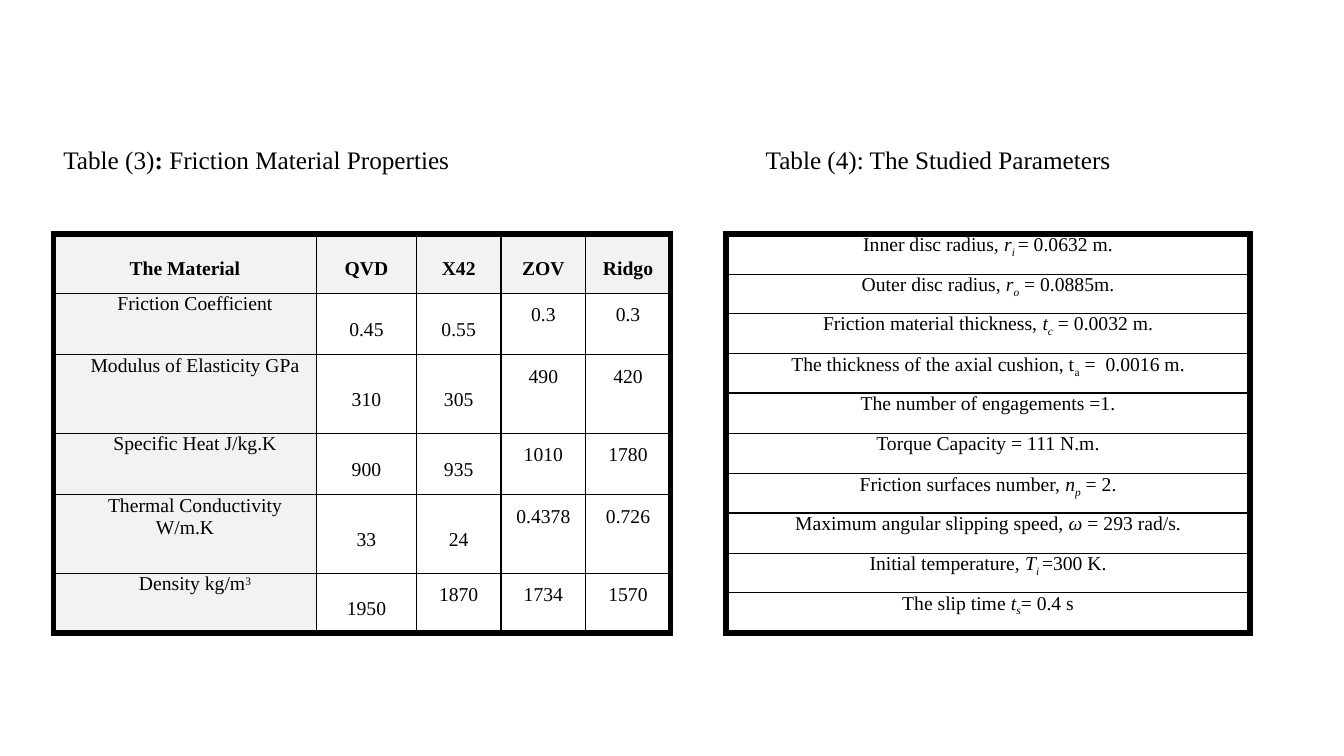
from dataclasses import dataclass
from typing import NamedTuple

from lxml import etree
from pptx import Presentation
from pptx.dml.color import RGBColor
from pptx.enum.text import MSO_ANCHOR, PP_ALIGN
from pptx.oxml.ns import qn
from pptx.util import Pt

PX = 9144  # EMU; 100 px to the inch
TOP, MIDDLE = MSO_ANCHOR.TOP, MSO_ANCHOR.MIDDLE
LEFT, CENTER = PP_ALIGN.LEFT, PP_ALIGN.CENTER
BLANK_LAYOUT = 6


@dataclass(frozen=True)
class Theme:
    font: str = "Times New Roman"
    ink: str = "000000"
    label_fill: str = "F2F2F2"
    caption_size: float = 18
    cell_size: float = 14
    frame_line: float = 4.5
    grid_line: float = 1


THEME = Theme()


class Span(NamedTuple):
    text: str
    bold: bool = False
    italic: bool = False
    baseline: int = 0


class Caption(NamedTuple):
    left: int
    width: int
    align: PP_ALIGN
    spans: list[Span]


class Material(NamedTuple):
    label: list[Span]
    values: list[str]
    height: int
    middle_columns: tuple[int, ...] = (1, 2)


class Parameter(NamedTuple):
    label: str
    symbol: str = ""
    index: str = ""
    value: str = ""
    italic: bool = True


@dataclass
class Cell:
    spans: list[Span]
    anchor: MSO_ANCHOR = TOP
    line_spacing: float = 1.0
    indent: int = 0
    fill: str | None = None


@dataclass
class Grid:
    left: int
    top: int
    widths: list[int]
    heights: list[int]
    rows: list[list[Cell]]


CAPTION_TOP, CAPTION_HEIGHT = 138, 40
CAPTIONS = [
    Caption(53, 407, LEFT, [Span("Table (3)"), Span(": ", bold=True),
                            Span("Friction Material Properties")]),
    Caption(597, 667, CENTER, [Span("Table (4): The Studied Parameters")]),
]

MATERIAL_HEADER = ["The Material", "QVD", "X42", "ZOV", "Ridgo"]
HEADER_HEIGHT = 59
MATERIALS = [
    Material([Span("Friction Coefficient")], ["0.45", "0.55", "0.3", "0.3"], 61),
    Material([Span("Modulus of Elasticity GPa")], ["310", "305", "490", "420"], 78),
    Material([Span("Specific Heat J/kg.K")], ["900", "935", "1010", "1780"], 61),
    Material([Span("Thermal Conductivity W/m.K")], ["33", "24", "0.4378", "0.726"], 78),
    Material([Span("Density kg/m"), Span("3", baseline=30)],
             ["1950", "1870", "1734", "1570"], 59, (1,)),
]

PARAMETERS = [
    Parameter("Inner disc radius, ", "r", "i ", "= 0.0632 m."),
    Parameter("Outer disc radius, ", "r", "o", " = 0.0885m."),
    Parameter("Friction material thickness, ", "t", "c", " = 0.0032 m."),
    Parameter("The thickness of the axial cushion, ", "t", "a", " =  0.0016 m.", False),
    Parameter("The number of engagements =1."),
    Parameter("Torque Capacity = 111 N.m."),
    Parameter("Friction surfaces number, ", "n", "p", " = 2."),
    Parameter("Maximum angular slipping speed, ", "ω", "", " = 293 rad/s."),
    Parameter("Initial temperature, ", "T", "i ", "=300 K."),
    Parameter("The slip time ", "t", "s", "= 0.4 s"),
]


def split_evenly(total: int, count: int) -> list[int]:
    """Whole-pixel parts that differ by at most one and add up to total."""
    edges = [round(total * step / count) for step in range(count + 1)]
    return [end - start for start, end in zip(edges, edges[1:])]


def material_rows() -> list[list[Cell]]:
    rows = [[Cell([Span(name, bold=True)], MIDDLE, 1.5, fill=THEME.label_fill)
             for name in MATERIAL_HEADER]]
    for material in MATERIALS:
        label = Cell(material.label, indent=20, fill=THEME.label_fill)
        values = [Cell([Span(value)], MIDDLE if column in material.middle_columns else TOP, 1.5)
                  for column, value in enumerate(material.values, 1)]
        rows.append([label, *values])
    return rows


def parameter_cell(parameter: Parameter) -> Cell:
    spans = [
        Span(parameter.label),
        Span(parameter.symbol, italic=parameter.italic),
        Span(parameter.index, italic=parameter.italic, baseline=-25),
        Span(parameter.value),
    ]
    return Cell([span for span in spans if span.text])


def write_spans(para, spans: list[Span], size: float) -> None:
    for span in spans:
        run = para.add_run()
        run.text = span.text
        formats = {"name": THEME.font, "size": Pt(size),
                   "bold": span.bold, "italic": span.italic}
        for name, value in formats.items():
            setattr(run.font, name, value)
        run.font.color.rgb = RGBColor.from_string(THEME.ink)
        if span.baseline:
            run._r.get_or_add_rPr().set("baseline", str(span.baseline * 1000))


def add_caption(page, caption: Caption) -> None:
    box = page.shapes.add_textbox(caption.left * PX, CAPTION_TOP * PX,
                                  caption.width * PX, CAPTION_HEIGHT * PX)
    box.text_frame.word_wrap = True
    para = box.text_frame.paragraphs[0]
    para.alignment = caption.align
    write_spans(para, caption.spans, THEME.caption_size)


def set_borders(table_cell, on_frame: dict[str, bool]) -> None:
    """Draw all four sides, heavier where the side lies on the table's frame."""
    properties = table_cell._tc.get_or_add_tcPr()
    for position, (side, heavy) in enumerate(on_frame.items()):
        width = THEME.frame_line if heavy else THEME.grid_line
        line = etree.Element(qn(f"a:ln{side}"), w=str(int(Pt(width))))
        fill = etree.SubElement(line, qn("a:solidFill"))
        etree.SubElement(fill, qn("a:srgbClr"), val=THEME.ink)
        properties.insert(position, line)


def fill_cell(table_cell, cell: Cell) -> None:
    formats = {"margin_left": 7 * PX, "margin_right": 7 * PX, "margin_top": 0,
               "margin_bottom": 0, "vertical_anchor": cell.anchor}
    for name, value in formats.items():
        setattr(table_cell, name, value)
    if cell.fill:
        table_cell.fill.solid()
        table_cell.fill.fore_color.rgb = RGBColor.from_string(cell.fill)
    else:
        table_cell.fill.background()
    para = table_cell.text_frame.paragraphs[0]
    para.alignment = CENTER
    para.line_spacing = cell.line_spacing
    if cell.indent:
        para._p.get_or_add_pPr().set("indent", str(cell.indent * PX))
    write_spans(para, cell.spans, THEME.cell_size)


def add_grid(page, grid: Grid) -> None:
    last_row, last_column = len(grid.heights) - 1, len(grid.widths) - 1
    table = page.shapes.add_table(
        last_row + 1, last_column + 1, grid.left * PX, grid.top * PX,
        sum(grid.widths) * PX, sum(grid.heights) * PX).table
    table.first_row = table.horz_banding = False
    for column, width in zip(table.columns, grid.widths):
        column.width = width * PX
    for row, height in zip(table.rows, grid.heights):
        row.height = height * PX
    for r, cells in enumerate(grid.rows):
        for c, cell in enumerate(cells):
            table_cell = table.cell(r, c)
            fill_cell(table_cell, cell)
            set_borders(table_cell, {"L": c == 0, "R": c == last_column,
                                     "T": r == 0, "B": r == last_row})


def main() -> None:
    deck = Presentation()
    deck.slide_width, deck.slide_height = 1333 * PX, 750 * PX
    page = deck.slides.add_slide(deck.slide_layouts[BLANK_LAYOUT])
    material_heights = [HEADER_HEIGHT, *(material.height for material in MATERIALS)]
    add_grid(page, Grid(53, 232, [261, 99, 84, 84, 84], material_heights, material_rows()))
    for caption in CAPTIONS:
        add_caption(page, caption)
    add_grid(page, Grid(720, 232, [520], split_evenly(396, len(PARAMETERS)),
                        [[parameter_cell(parameter)] for parameter in PARAMETERS]))
    deck.save("out.pptx")


if __name__ == "__main__":
    main()
